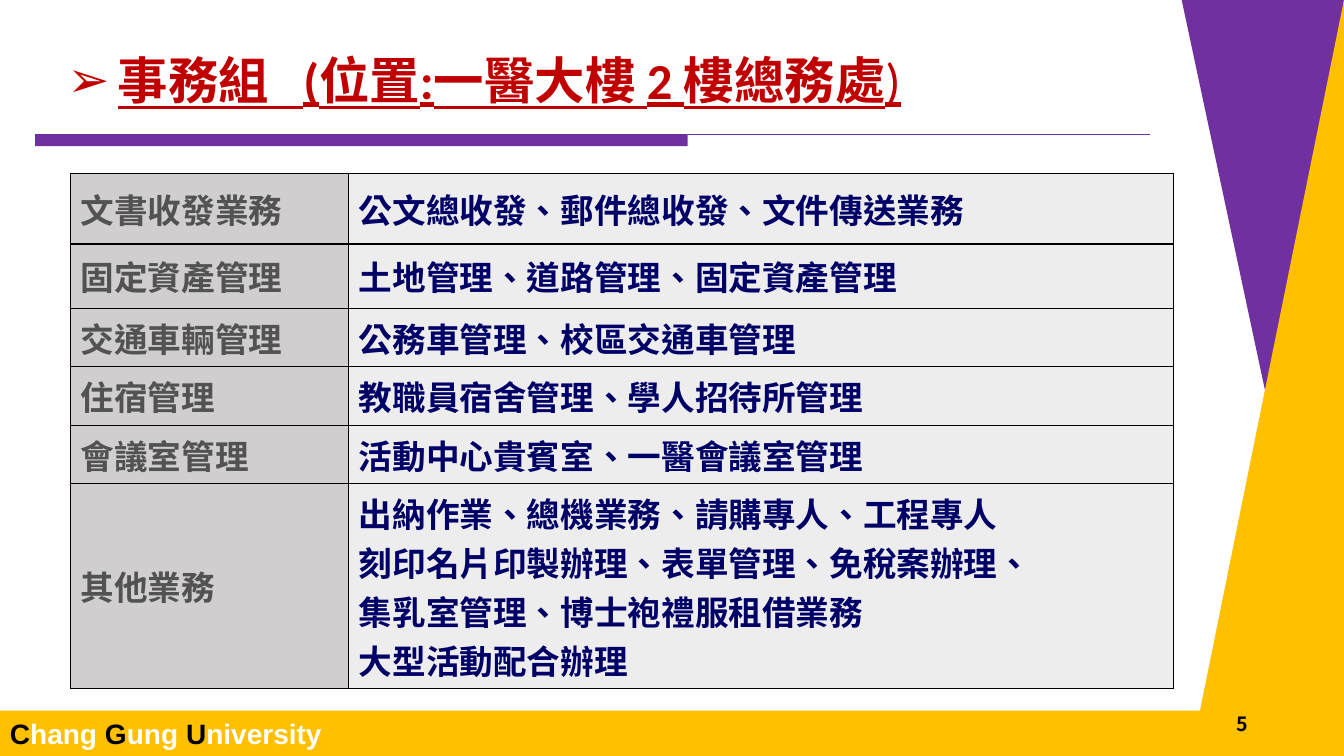
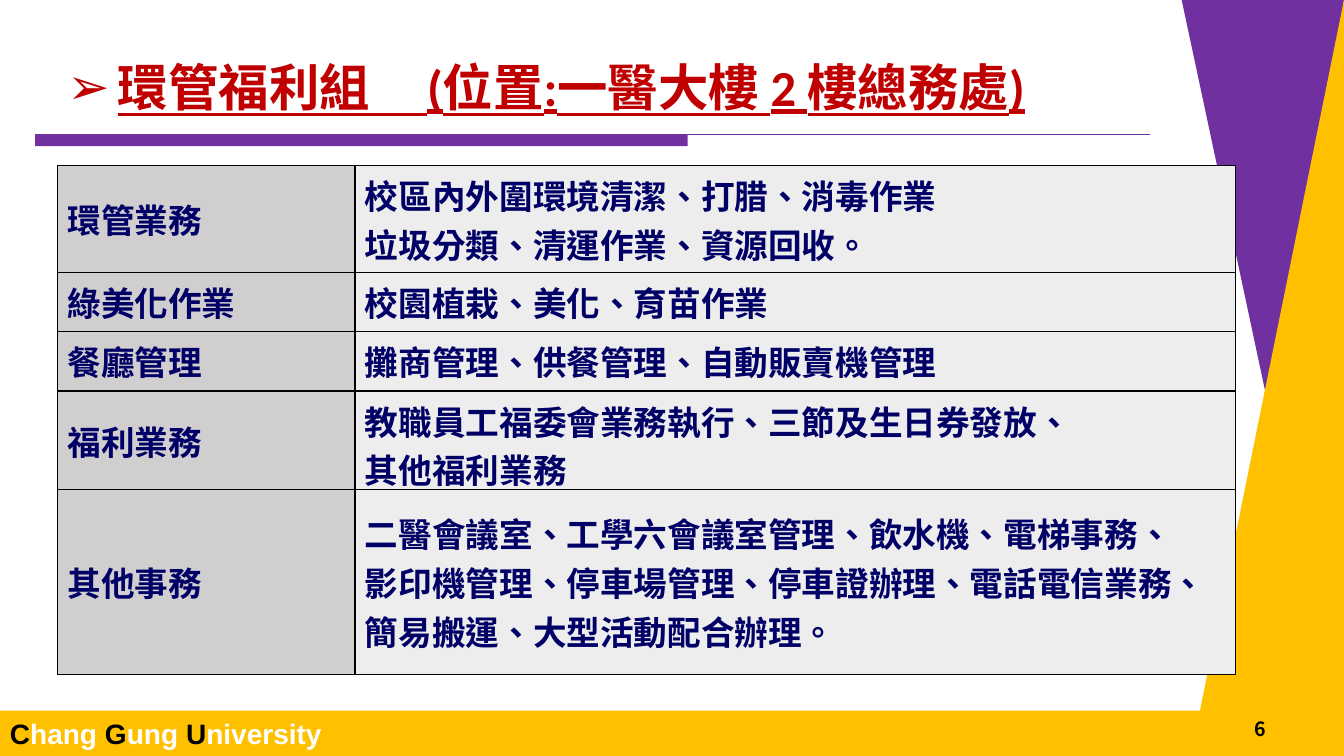
"""Build two slides that list the duties of two office sections."""
from lxml import etree
from pptx import Presentation
from pptx.dml.color import RGBColor
from pptx.enum.lang import MSO_LANGUAGE_ID
from pptx.enum.shapes import MSO_CONNECTOR, MSO_SHAPE
from pptx.enum.text import MSO_ANCHOR, PP_ALIGN
from pptx.oxml.ns import qn
from pptx.util import Inches, Pt

RECT = MSO_SHAPE.RECTANGLE
LINE = MSO_CONNECTOR.STRAIGHT
MID = MSO_ANCHOR.MIDDLE
CENTER = PP_ALIGN.CENTER
TAIWAN = MSO_LANGUAGE_ID.TRADITIONAL_CHINESE

WIDE, HIGH, FOOT = 13.33, 7.5, 7.05
PURPLE, GOLD, RED = "7030A0", "FFC000", "C00000"
BLACK, WHITE, NAVY, GRAY = "000000", "FFFFFF", "000066", "525252"
HEAD, BODY = "D0CECE", "EDEDED"
HAN = "Noto Sans CJK SC"

SLIDES = [
    {
        "title": ["事務組   (位置:一醫大樓 2 樓總務處", ")"],
        "box": (0.57, 0.44, 9.7, 0.71),
        "page": "5",
        "spot": (10.94, 7.06, 2.76, 0.28),
        "at": (0.7, 1.72),
        "cols": (2.76, 8.18),
        "ink": GRAY,
        "rows": [
            (0.7, "文書收發業務", "公文總收發、郵件總收發、文件傳送業務"),
            (0.64, "固定資產管理", "土地管理、道路管理、固定資產管理"),
            (0.58, "交通車輛管理", "公務車管理、校區交通車管理"),
            (0.58, "住宿管理", "教職員宿舍管理、學人招待所管理"),
            (0.58, "會議室管理", "活動中心貴賓室、一醫會議室管理"),
            (2.03, "其他業務",
             "出納作業、總機業務、請購專人、工程專人\n"
             "刻印名片印製辦理、表單管理、免稅案辦理、\n"
             "集乳室管理、博士袍禮服租借業務\n"
             "大型活動配合辦理"),
        ],
    },
    {
        "title": ["環管福利組     (位置:一醫大樓 2 樓總務處)"],
        "box": (0.57, 0.51, 10.66, 0.71),
        "page": "6",
        "spot": (11.65, 7, 1.69, 0.5),
        "at": (0.57, 1.64),
        "cols": (2.95, 8.73),
        "ink": NAVY,
        "rows": [
            (1.06, "環管業務",
             "校區內外圍環境清潔、打腊、消毒作業\n"
             "垃圾分類、清運作業、資源回收。"),
            (0.59, "綠美化作業", "校園植栽、美化、育苗作業"),
            (0.59, "餐廳管理", "攤商管理、供餐管理、自動販賣機管理"),
            (0.98, "福利業務",
             "教職員工福委會業務執行、三節及生日券發放、\n"
             "其他福利業務"),
            (1.83, "其他事務",
             "二醫會議室、工學六會議室管理、飲水機、電梯事務、\n"
             "影印機管理、停車場管理、停車證辦理、電話電信業務、\n"
             "簡易搬運、大型活動配合辦理。"),
        ],
    },
]


def color(code):
    """Turn a hex string into a colour."""
    return RGBColor.from_string(code)


def inches(nums):
    """Turn numbers into lengths."""
    return [Inches(n) for n in nums]


def add(root, tag, **attrs):
    """Append an element to an XML parent."""
    return etree.SubElement(root, qn(tag), attrs)


def style(run, size, ink, face=HAN, bold=True):
    """Set the look of a run."""
    font = run.font
    font.size, font.bold, font.name = Pt(size), bold, face
    font.color.rgb = color(ink)
    if face != "Arial":
        font.language_id = TAIWAN
        add(run._r.get_or_add_rPr(), "a:ea", typeface=HAN)


def paint(shape, ink):
    """Give a shape a plain fill."""
    shape.shadow.inherit = False
    shape.fill.solid()
    shape.fill.fore_color.rgb = color(ink)
    shape.line.fill.background()


def block(slide, ink, *at):
    """Draw a filled rectangle."""
    shape = slide.shapes.add_shape(RECT, *inches(at))
    paint(shape, ink)
    return shape


def wedge(slide, ink, first, *rest):
    """Draw a filled triangle."""
    pen = slide.shapes.build_freeform(*inches(first), scale=1.0)
    pen.add_line_segments([inches(spot) for spot in rest], close=True)
    paint(pen.convert_to_shape(), ink)


def rule(slide, ink, *at):
    """Draw a thin line."""
    line = slide.shapes.add_connector(LINE, *inches(at))
    line.line.color.rgb = color(ink)
    line.line.width = Pt(0.75)
    add(line._element.spPr, "a:effectLst")


def frame(slide):
    """Draw the wedges, the title rule and the footer band."""
    wedge(slide, PURPLE, (WIDE, 0), (11.72, 0), (12.67, 4.45))
    wedge(slide, GOLD, (WIDE, 0), (11.9, 7.06), (WIDE, 7.06))
    band = block(slide, GOLD, 0, FOOT, WIDE, HIGH - FOOT)
    band.text_frame.vertical_anchor = MID
    para = band.text_frame.paragraphs[0]
    para.alignment = PP_ALIGN.LEFT
    for word in ("Chang ", "Gung ", "University"):
        for text, ink in ((word[0], BLACK), (word[1:], WHITE)):
            run = para.add_run()
            run.text = text
            style(run, 20, ink, "Arial")
    block(slide, PURPLE, 0.35, 1.33, 6.47, 0.12)
    rule(slide, PURPLE, 0.35, 1.33, 11.41, 1.33)


def number(slide, text, at):
    """Add the page number."""
    box = slide.shapes.add_textbox(*inches(at)).text_frame
    box.word_wrap = True
    box.vertical_anchor = MID
    box.text = text
    para = box.paragraphs[0]
    para.alignment = CENTER
    para.line_spacing = 0.8
    style(para.runs[0], 14, BLACK)


def title(slide, parts, at):
    """Add the bulleted title, with any later part in regular weight."""
    box = slide.shapes.add_textbox(*inches(at)).text_frame
    box.word_wrap = True
    para = box.paragraphs[0]
    props = para._p.get_or_add_pPr()
    props.set("marL", str(Inches(0.5)))
    props.set("indent", str(-Inches(0.5)))
    add(props, "a:buFont", typeface="Arial")
    add(props, "a:buChar", char="➢")
    for i, text in enumerate(parts):
        run = para.add_run()
        run.text = text
        style(run, 36, RED, "Calibri", i == 0)
        run.font.underline = True


def edge(cell):
    """Put a thin black border around a cell."""
    props = cell._tc.get_or_add_tcPr()
    for side in "LRTB":
        line = add(props, "a:ln" + side, w=str(Pt(1)))
        add(add(line, "a:solidFill"), "a:srgbClr", val=BLACK)


def fill(cell, text, ink, back):
    """Write and colour one table cell."""
    edge(cell)
    cell.fill.solid()
    cell.fill.fore_color.rgb = color(back)
    cell.vertical_anchor = MID
    cell.text_frame.text = text
    for para in cell.text_frame.paragraphs:
        style(para.runs[0], 24, ink)


def grid(slide, at, cols, rows, ink):
    """Add the table of duties."""
    size = sum(cols), sum(row[0] for row in rows)
    table = slide.shapes.add_table(
        len(rows), len(cols), *inches(at + size)).table
    table.first_row = table.horz_banding = False
    for col, width in zip(table.columns, cols):
        col.width = Inches(width)
    for row, (height, head, body) in zip(table.rows, rows):
        row.height = Inches(height)
        fill(row.cells[0], head, ink, HEAD)
        fill(row.cells[1], body, NAVY, BODY)


def main():
    """Build and save the slides."""
    deck = Presentation()
    deck.slide_width, deck.slide_height = inches((WIDE, HIGH))
    for page in SLIDES:
        slide = deck.slides.add_slide(deck.slide_layouts[6])
        frame(slide)
        number(slide, page["page"], page["spot"])
        grid(slide, page["at"], page["cols"], page["rows"], page["ink"])
        title(slide, page["title"], page["box"])
    deck.save("out.pptx")


if __name__ == "__main__":
    main()
